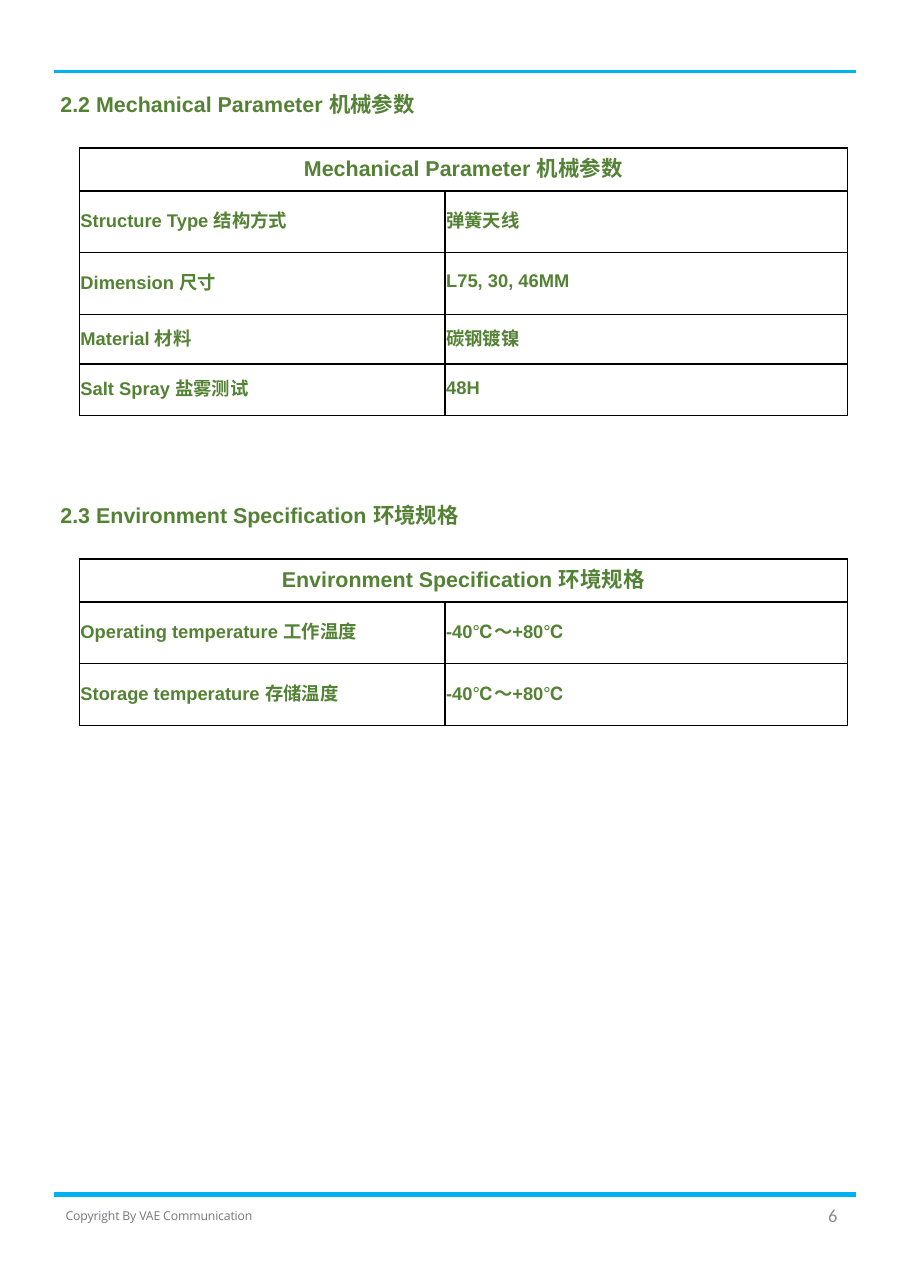
"""Build a specification page with mechanical and environment tables."""
from lxml import etree
from pptx import Presentation
from pptx.dml.color import RGBColor
from pptx.enum.shapes import MSO_CONNECTOR
from pptx.enum.text import MSO_ANCHOR, PP_ALIGN
from pptx.oxml.ns import qn
from pptx.util import Inches, Pt

LEFT, CENTER, RIGHT = PP_ALIGN.LEFT, PP_ALIGN.CENTER, PP_ALIGN.RIGHT
TOP, MIDDLE = MSO_ANCHOR.TOP, MSO_ANCHOR.MIDDLE
STRAIGHT = MSO_CONNECTOR.STRAIGHT

GREEN = RGBColor(0x54, 0x82, 0x35)
SKY = RGBColor(0x00, 0xB0, 0xF0)
BLACK = RGBColor(0x00, 0x00, 0x00)
PAGE_GRAY = RGBColor(0x8C, 0x8C, 0x8C)
COPYRIGHT_GRAY = RGBColor(0x75, 0x75, 0x7C)

PAGE_WIDTH, PAGE_HEIGHT = Inches(8.27), Inches(11.69)
GRID = 100
RULE_LEFT, RULE_SPAN = 5.93, 88.03
HEADER_ROW, FOOTER_ROW, FOOTER_HEIGHT = 5.56, 92.73, 3.25
TABLE_LEFT, TABLE_COLUMNS, TABLE_DROP = 8.71, (40.15, 44.14), 4.83
TITLE_HEIGHT, TALL, MEDIUM, LAST = 3.34, 4.79, 3.85, 4.02

SECTIONS = [
    (6.67, "2.2", "Mechanical Parameter 机械参数", [
        (TALL, "Structure Type 结构方式", "弹簧天线"),
        (TALL, "Dimension 尺寸", "L75, 30, 46MM"),
        (MEDIUM, "Material 材料", "碳钢镀镍"),
        (LAST, "Salt Spray 盐雾测试", "48H"),
    ]),
    (38.58, "2.3", "Environment Specification 环境规格", [
        (TALL, "Operating temperature 工作温度", "-40℃～+80℃"),
        (TALL, "Storage temperature 存储温度", "-40℃～+80℃"),
    ]),
]


def across(columns):
    """Turn grid columns into a horizontal length."""
    return round(PAGE_WIDTH * columns / GRID)


def down(rows):
    """Turn grid rows into a vertical length."""
    return round(PAGE_HEIGHT * rows / GRID)


def write(frame, text, size=12, font="Arial", color=GREEN, bold=True,
          align=LEFT, spacing=None):
    """Write one formatted paragraph into a text frame."""
    paragraph = frame.paragraphs[0]
    paragraph.alignment = align
    run = paragraph.add_run()
    run.text = text
    run.font.size = Pt(size)
    run.font.name = font
    run.font.bold = bold
    run.font.color.rgb = color
    if spacing is not None:
        run.font._element.set("spc", str(round(spacing * 100)))


def add_label(slide, text, left, top, width, height, anchor=TOP, **style):
    """Place a wrapped text box on the grid."""
    box = slide.shapes.add_textbox(across(left), down(top), across(width), down(height))
    box.text_frame.word_wrap = True
    box.text_frame.vertical_anchor = anchor
    write(box.text_frame, text, **style)


def add_rule(slide, row, weight):
    """Draw a horizontal page rule."""
    rule = slide.shapes.add_connector(
        STRAIGHT, across(RULE_LEFT), down(row), across(RULE_LEFT + RULE_SPAN), down(row))
    rule.line.color.rgb = SKY
    rule.line.width = Pt(weight)
    etree.SubElement(rule._element.spPr, qn("a:effectLst"))


def style_cell(cell):
    """Give a cell thin black borders, no fill and tight margins."""
    properties = cell._tc.get_or_add_tcPr()
    for side in ("a:lnL", "a:lnR", "a:lnT", "a:lnB"):
        border = etree.SubElement(properties, qn(side), w=str(Pt(1)))
        fill = etree.SubElement(border, qn("a:solidFill"))
        etree.SubElement(fill, qn("a:srgbClr"), val=str(BLACK))
    cell.fill.background()
    cell.vertical_anchor = MIDDLE
    cell.margin_left = cell.margin_right = cell.margin_top = Inches(0.01)
    cell.margin_bottom = Inches(0.05)


def add_spec_table(slide, top, title, entries):
    """Add a two-column table under a merged title row."""
    heights = [TITLE_HEIGHT] + [height for height, *_ in entries]
    table = slide.shapes.add_table(
        len(heights), len(TABLE_COLUMNS), across(TABLE_LEFT), down(top),
        across(sum(TABLE_COLUMNS)), down(sum(heights))).table
    table.horz_banding = False
    for column, width in zip(table.columns, TABLE_COLUMNS):
        column.width = across(width)
    for row, height in zip(table.rows, heights):
        row.height = down(height)
    for cell in table.iter_cells():
        style_cell(cell)
    table.cell(0, 0).merge(table.cell(0, 1))
    write(table.cell(0, 0).text_frame, title, size=14, align=CENTER)
    for row, (_, *texts) in enumerate(entries, start=1):
        for column, text in enumerate(texts):
            write(table.cell(row, column).text_frame, text)


def add_section(slide, top, number, title, entries):
    """Add a numbered heading and its table."""
    add_label(slide, f"{number} {title}", 5.44, top, 66.99, 2.91, size=14)
    add_spec_table(slide, top + TABLE_DROP, title, entries)


def add_footer(slide):
    """Add the page number and copyright line."""
    add_label(slide, "6", 71.83, FOOTER_ROW, 21.28, FOOTER_HEIGHT, MIDDLE,
              font="Calibri", color=PAGE_GRAY, bold=False, align=RIGHT)
    add_label(slide, "Copyright By VAE Communication", 3.26, FOOTER_ROW, 28.42,
              FOOTER_HEIGHT, MIDDLE, size=8, font="Open Sans",
              color=COPYRIGHT_GRAY, bold=False, align=CENTER, spacing=-0.1)


def main():
    """Assemble and save the page."""
    deck = Presentation()
    deck.slide_width, deck.slide_height = PAGE_WIDTH, PAGE_HEIGHT
    slide = deck.slides.add_slide(deck.slide_layouts[6])
    add_rule(slide, HEADER_ROW, 1.5)
    add_rule(slide, FOOTER_ROW, 3)
    for section in SECTIONS:
        add_section(slide, *section)
    add_footer(slide)
    deck.save("out.pptx")


if __name__ == "__main__":
    main()
